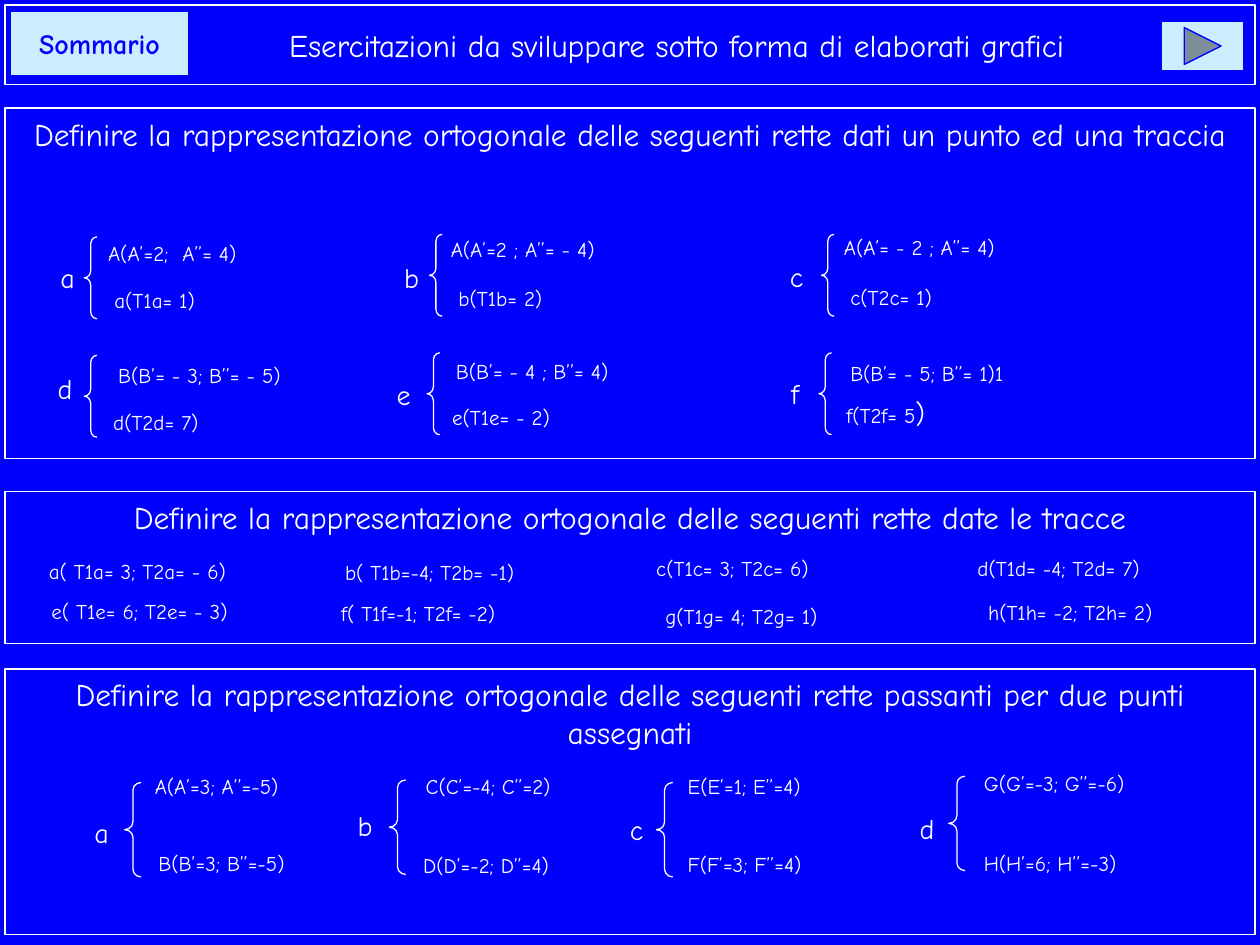
from dataclasses import dataclass

from pptx import Presentation
from pptx.dml.color import RGBColor
from pptx.enum.shapes import MSO_SHAPE
from pptx.enum.text import MSO_ANCHOR, PP_ALIGN
from pptx.util import Inches, Pt


@dataclass(frozen=True)
class Theme:
    """Colours, font and type sizes of the slide."""
    blue: RGBColor = RGBColor(0x00, 0x00, 0xFF)
    white: RGBColor = RGBColor(0xFF, 0xFF, 0xFF)
    pale: RGBColor = RGBColor(0xCC, 0xEC, 0xFF)
    font: str = "Comic Neue"
    heading: int = 18
    label: int = 16
    body: int = 12


def write(tf, text, *, theme, size, color=None, bold=False, align=PP_ALIGN.LEFT):
    """Append a formatted run to the first paragraph of a text frame."""
    p = tf.paragraphs[0]
    p.alignment = align
    r = p.add_run()
    r.text = text
    r.font.name = theme.font
    r.font.size = Pt(size)
    r.font.bold = bold
    r.font.color.rgb = color or theme.white


class Sheet:
    """Draws the elements of an exercise sheet on one slide."""

    def __init__(self, slide, theme):
        """Keep the slide and its style, and colour the background."""
        self.s, self.theme = slide, theme
        fill = slide.background.fill
        fill.solid()
        fill.fore_color.rgb = theme.blue

    def shape(self, kind, x, y, w, h, line, weight, fill=None):
        """Add a preset shape, hollow unless a fill is given."""
        sp = self.s.shapes.add_shape(kind, Inches(x), Inches(y), Inches(w), Inches(h))
        sp.shadow.inherit = False
        if fill is None:
            sp.fill.background()
        else:
            sp.fill.solid()
            sp.fill.fore_color.rgb = fill
        sp.line.color.rgb = line
        sp.line.width = Pt(weight)
        return sp

    def panel(self, title, y, h, weight=0.75, anchor=MSO_ANCHOR.TOP, indent=0.1):
        """Add a full-width outlined panel with its centred heading."""
        sp = self.shape(MSO_SHAPE.RECTANGLE, 0.04, y, 9.92, h, self.theme.white, weight)
        tf = sp.text_frame
        tf.word_wrap = True
        tf.vertical_anchor = anchor
        tf.margin_left = Inches(indent)
        write(tf, title, theme=self.theme, size=self.theme.heading, align=PP_ALIGN.CENTER)

    def button(self, kind, x, y, w, h, text=""):
        """Add a pale navigation button with an optional label."""
        sp = self.shape(kind, x, y, w, h, self.theme.blue, 0, self.theme.pale)
        if text:
            tf = sp.text_frame
            tf.vertical_anchor = MSO_ANCHOR.MIDDLE
            write(tf, text, theme=self.theme, size=self.theme.label,
                  color=self.theme.blue, bold=True, align=PP_ALIGN.CENTER)

    def text(self, text, x, y, w, size=None, h=0.3, align=PP_ALIGN.LEFT):
        """Add a one-line text box and return its text frame."""
        tb = self.s.shapes.add_textbox(Inches(x), Inches(y), Inches(w), Inches(h))
        tf = tb.text_frame
        tf.word_wrap = True
        write(tf, text, theme=self.theme, size=size or self.theme.body, align=align)
        return tf

    def system(self, label, brace, lines, w, h, adj):
        """Add a named brace followed by its conditions."""
        name, x, y = label
        sp = self.shape(MSO_SHAPE.LEFT_BRACE, *brace, w, h, self.theme.white, 0.75)
        sp.adjustments[0] = adj
        self.text(name, x, y, 0.29, self.theme.label, 0.37)
        for line in lines:
            self.text(*line)


POINT_AND_TRACE = [
    (("a", 0.38, 2.02), (0.67, 1.88),
     [("A(A’=2;  A’’= 4)", 0.76, 1.86, 1.56), ("a(T1a= 1)", 0.81, 2.23, 1.19)]),
    (("b", 3.11, 2.02), (3.41, 1.86),
     [("A(A’=2 ; A’’= - 4)", 3.48, 1.83, 1.57), ("b(T1b= 2)", 3.54, 2.22, 1.84)]),
    (("c", 6.17, 2.01), (6.52, 1.86),
     [("A(A’= - 2 ; A’’= 4)", 6.6, 1.81, 1.87), ("c(T2c= 1)", 6.65, 2.21, 1.87)]),
    (("d", 0.36, 2.9), (0.67, 2.82),
     [("B(B’= - 3; B’’= - 5)", 0.84, 2.83, 1.67), ("d(T2d= 7)", 0.8, 3.2, 1.45)]),
    (("e", 3.05, 2.95), (3.39, 2.8),
     [("B(B’= - 4 ; B’’= 4)", 3.52, 2.8, 1.68), ("e(T1e= - 2)", 3.49, 3.16, 1.64)]),
    (("f", 6.18, 2.94), (6.5, 2.8), [("B(B’= - 5; B’’= 1)1", 6.65, 2.81, 1.6)]),
]

TWO_TRACES = [
    ("a( T1a= 3; T2a= - 6)", 0.29, 4.38), ("b( T1b=-4; T2b= -1)", 2.64, 4.39),
    ("c(T1c= 3; T2c= 6)", 5.11, 4.36), ("d(T1d= -4; T2d= 7)", 7.66, 4.36),
    ("e( T1e= 6; T2e= - 3)", 0.31, 4.7), ("f( T1f=-1; T2f= -2)", 2.61, 4.72),
]

TWO_TRACES_CENTRED = [("g(T1g= 4; T2g= 1)", 4.9, 4.74), ("h(T1h= -2; T2h= 2)", 7.51, 4.71)]

TWO_POINTS = [
    (("a", 0.65, 6.42), (0.99, 6.21),
     [("A(A’=3; A’’=-5)", 1.13, 6.09, 1.75), ("B(B’=3; B’’=-5)", 1.16, 6.7, 1.57)]),
    (("b", 2.74, 6.37), (3.09, 6.19),
     [("C(C’=-4; C’’=2)", 3.28, 6.09, 1.78), ("D(D’=-2; D’’=4)", 3.26, 6.72, 1.89)]),
    (("c", 4.9, 6.4), (5.21, 6.21),
     [("E(E’=1; E’’=4)", 5.36, 6.09, 2.03), ("F(F’=3; F’’=4)", 5.36, 6.71, 1.54)]),
    (("d", 7.2, 6.39), (7.53, 6.16),
     [("G(G’=-3; G’’=-6)", 7.71, 6.07, 1.61), ("H(H’=6; H’’=-3)", 7.71, 6.7, 1.76)]),
]


def main():
    """Build the exercise slide and save it."""
    prs = Presentation()
    prs.slide_width, prs.slide_height = Inches(10), Inches(7.5)
    theme = Theme()
    sheet = Sheet(prs.slides.add_slide(prs.slide_layouts[6]), theme)

    sheet.button(MSO_SHAPE.ACTION_BUTTON_CUSTOM, 0.08, 0.09, 1.42, 0.51, "Sommario")
    sheet.panel("Esercitazioni da sviluppare sotto forma di elaborati grafici",
                0.04, 0.63, anchor=MSO_ANCHOR.MIDDLE, indent=0.84)
    sheet.button(MSO_SHAPE.ACTION_BUTTON_FORWARD_OR_NEXT, 9.22, 0.17, 0.65, 0.39)

    sheet.panel("Definire la rappresentazione ortogonale delle seguenti rette "
                "dati un punto ed una traccia", 0.86, 2.78, weight=1)
    for label, brace, lines in POINT_AND_TRACE:
        sheet.system(label, brace, lines, 0.1, 0.65, 0.56)
    tf = sheet.text("f(T2f= 5", 6.62, 3.09, 1.87, h=0.37)
    write(tf, ")", theme=theme, size=theme.label)

    sheet.panel("Definire la rappresentazione ortogonale delle seguenti rette "
                "date le tracce", 3.9, 1.21)
    for line in TWO_TRACES:
        sheet.text(*line, 1.97)
    for line in TWO_TRACES_CENTRED:
        sheet.text(*line, 1.97, align=PP_ALIGN.CENTER)

    sheet.panel("Definire la rappresentazione ortogonale delle seguenti rette "
                "passanti per due punti assegnati", 5.31, 2.11)
    for label, brace, lines in TWO_POINTS:
        sheet.system(label, brace, lines, 0.13, 0.75, 0.47)

    prs.save("out.pptx")


if __name__ == "__main__":
    main()
